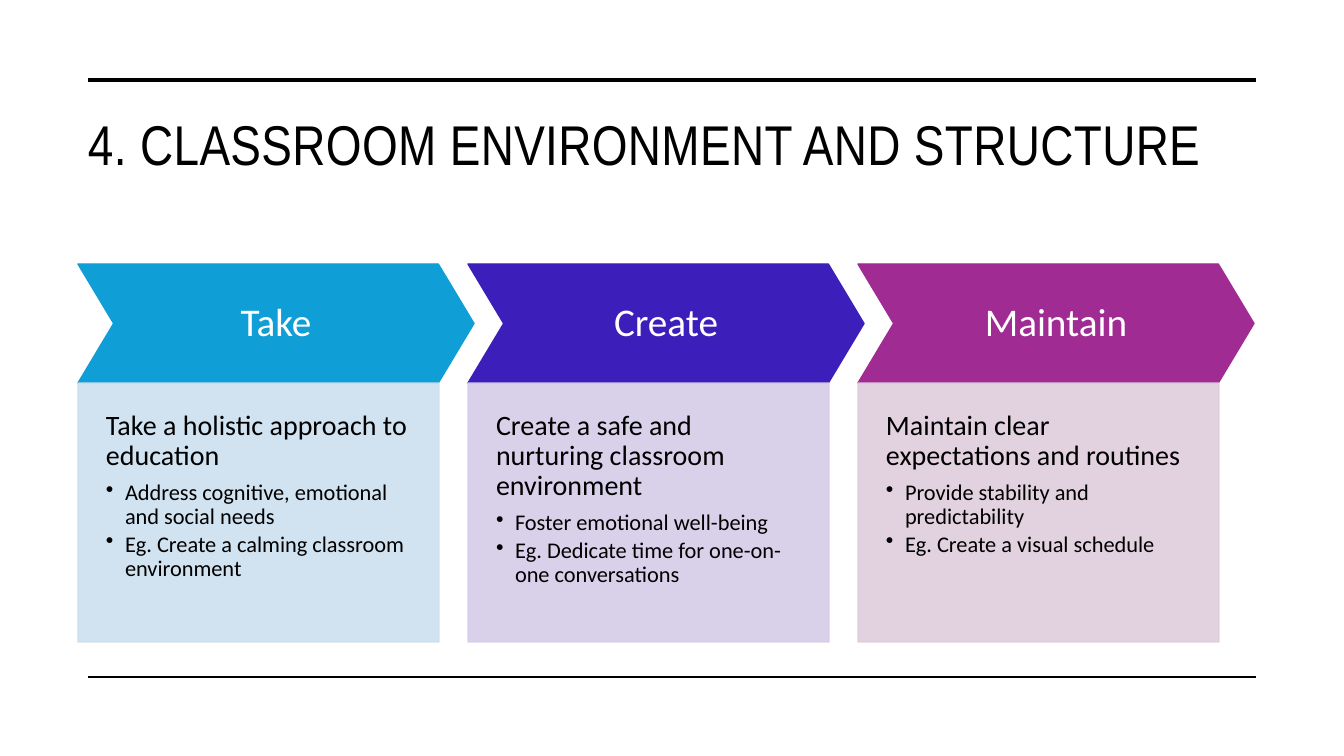
import pptx
import pptx.dml.color
import pptx.enum.shapes
import pptx.enum.text
import pptx.oxml
import pptx.oxml.ns
import pptx.util

RGBColor = pptx.dml.color.RGBColor
SHAPES = pptx.enum.shapes.MSO_SHAPE
ALIGN = pptx.enum.text.PP_ALIGN
ANCHOR = pptx.enum.text.MSO_ANCHOR

BLACK = RGBColor(0x00, 0x00, 0x00)
WHITE = RGBColor(0xFF, 0xFF, 0xFF)
BLUE, PALE_BLUE = RGBColor(0x0F, 0x9E, 0xD5), RGBColor(0xCC, 0xDF, 0xEF)
INDIGO, PALE_INDIGO = RGBColor(0x3C, 0x1E, 0xBA), RGBColor(0xD5, 0xCC, 0xE8)
PURPLE, PALE_PURPLE = RGBColor(0xA0, 0x2B, 0x93), RGBColor(0xDF, 0xCD, 0xDC)

TITLE = "4. CLASSROOM ENVIRONMENT AND STRUCTURE"
STEPS = [
    ("Take", BLUE, PALE_BLUE, "Take a holistic approach to education",
     ["Address cognitive, emotional and social needs",
      "Eg. Create a calming classroom environment"]),
    ("Create", INDIGO, PALE_INDIGO,
     "Create a safe and nurturing classroom environment",
     ["Foster emotional well-being",
      "Eg. Dedicate time for one-on-one conversations"]),
    ("Maintain", PURPLE, PALE_PURPLE,
     "Maintain clear expectations and routines",
     ["Provide stability and predictability",
      "Eg. Create a visual schedule"]),
]
RULES = [(80, 3.5), (677, 1)]  # y in px, width in points
RULE_LEFT, RULE_RIGHT = 88, 1256
STEP_LEFT, STEP_PITCH = 78, 390
CHEVRON_TOP, CHEVRON_WIDTH, CHEVRON_HEIGHT = 264, 396, 119
CARD_WIDTH, CARD_HEIGHT = 361, 259
BULLET_INDENT = 19


def px(length):
    return pptx.util.Emu(round(length * 12192000 / 1344))


def add_xml(parent, tag, **attributes):
    child = pptx.oxml.parse_xml(f"<a:{tag} {pptx.oxml.ns.nsdecls('a')}/>")
    for name, value in attributes.items():
        child.set(name, str(value))
    parent.append(child)


def add_text(frame, text, size, color=BLACK, font="Calibri", align=ALIGN.LEFT,
             spacing=0.9, after=0, bullet=False, tracking=None):
    """Fill the frame's first paragraph if it is empty, else append one."""
    para = frame.paragraphs[-1]
    if para.runs:
        para = frame.add_paragraph()
    para.alignment = align
    para.line_spacing = spacing
    para.space_after = pptx.util.Pt(after)
    para.space_before = pptx.util.Pt(0)
    if bullet:
        properties = para._p.get_or_add_pPr()
        properties.set("marL", str(px(BULLET_INDENT)))
        properties.set("indent", str(-px(BULLET_INDENT)))
        add_xml(properties, "buChar", char="•")
    span = para.add_run()
    span.text = text
    span.font.name = font
    span.font.size = pptx.util.Pt(size)
    span.font.color.rgb = color
    if tracking:
        span._r.get_or_add_rPr().set("spc", str(tracking))


def set_frame(frame, anchor, insets):
    frame.word_wrap = True
    frame.auto_size = pptx.enum.text.MSO_AUTO_SIZE.NONE
    frame.vertical_anchor = anchor
    (frame.margin_left, frame.margin_top,
     frame.margin_right, frame.margin_bottom) = map(px, insets)


def add_panel(slide, kind, bounds, color, opacity=100):
    panel = slide.shapes.add_shape(kind, *map(px, bounds))
    panel.shadow.inherit = False
    panel.fill.solid()
    panel.fill.fore_color.rgb = color
    panel.line.color.rgb = color
    panel.line.width = pptx.util.Pt(1)
    if opacity < 100:
        for tint in panel._element.spPr.iter(pptx.oxml.ns.qn("a:srgbClr")):
            add_xml(tint, "alpha", val=opacity * 1000)
    return panel


def add_rule(slide, y, width):
    rule = slide.shapes.add_connector(
        pptx.enum.shapes.MSO_CONNECTOR.STRAIGHT,
        px(RULE_LEFT), px(y), px(RULE_RIGHT), px(y))
    rule.line.color.rgb = BLACK
    rule.line.width = pptx.util.Pt(width)
    add_xml(rule._element.spPr, "effectLst")


def add_step(slide, left, name, color, pale, heading, points):
    chevron = add_panel(slide, SHAPES.CHEVRON,
                        (left, CHEVRON_TOP, CHEVRON_WIDTH, CHEVRON_HEIGHT), color)
    chevron.adjustments[0] = 0.3
    set_frame(chevron.text_frame, ANCHOR.MIDDLE, (15, 15, 15, 15))
    add_text(chevron.text_frame, name, 28, color=WHITE, align=ALIGN.CENTER)

    card = add_panel(slide, SHAPES.RECTANGLE,
                     (left, CHEVRON_TOP + CHEVRON_HEIGHT, CARD_WIDTH, CARD_HEIGHT),
                     pale, opacity=90)
    set_frame(card.text_frame, ANCHOR.TOP, (28, 28, 28, 57))
    add_text(card.text_frame, heading, 20, after=7)
    for point in points:
        add_text(card.text_frame, point, 16, after=2.4, bullet=True)


def main():
    deck = pptx.Presentation()
    deck.slide_width, deck.slide_height = px(1344), px(756)
    slide = deck.slides.add_slide(deck.slide_layouts[5])
    title = slide.shapes.title
    title.left, title.top, title.width, title.height = map(px, (78, 100, 1178, 127))
    set_frame(title.text_frame, ANCHOR.TOP, (10, 9, 10, 5))
    add_text(title.text_frame, TITLE, 40, font="Arial Narrow", spacing=1, tracking=30)
    for y, width in RULES:
        add_rule(slide, y, width)
    for index, step in enumerate(STEPS):
        add_step(slide, STEP_LEFT + index * STEP_PITCH, *step)
    deck.save("out.pptx")


if __name__ == "__main__":
    main()
